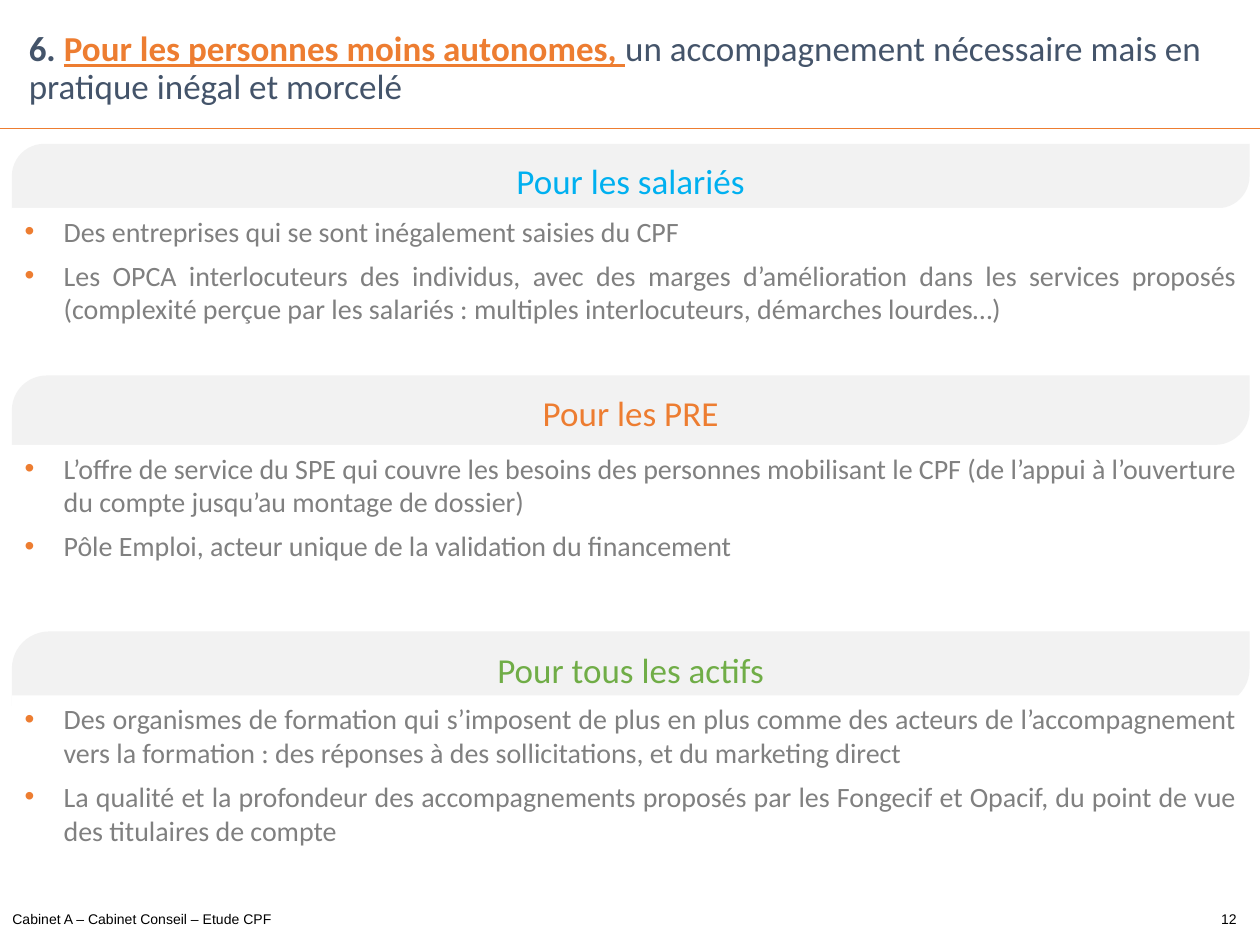
from lxml.etree import SubElement
from pptx import Presentation
from pptx.dml.color import RGBColor
from pptx.enum.shapes import MSO_CONNECTOR, MSO_SHAPE
from pptx.enum.text import MSO_ANCHOR, MSO_AUTO_SIZE, PP_ALIGN
from pptx.oxml.ns import qn
from pptx.util import Cm, Pt

ORANGE = RGBColor(0xED, 0x7D, 0x31)
SLATE = RGBColor(0x44, 0x54, 0x6A)
BLUE = RGBColor(0x00, 0xB0, 0xF0)
GREEN = RGBColor(0x70, 0xAD, 0x47)
GREY = RGBColor(0x80, 0x80, 0x80)
PALE = RGBColor(0xF2, 0xF2, 0xF2)
WHITE = RGBColor(0xFF, 0xFF, 0xFF)
BLACK = RGBColor(0x00, 0x00, 0x00)

LEFT, WIDTH = 0.24, 24.95

SECTIONS = [
    ("Pour les salariés", BLUE, 2.9, 1.3, 4.19, 2.21, [
        "Des entreprises qui se sont inégalement saisies du CPF",
        "Les OPCA interlocuteurs des individus, avec des marges d’amélioration dans les services "
        "proposés (complexité perçue par les salariés : multiples interlocuteurs, démarches lourdes…)",
    ]),
    ("Pour les PRE", ORANGE, 7.57, 1.4, 8.97, 2.9, [
        "L’offre de service du SPE qui couvre les besoins des personnes mobilisant le CPF "
        "(de l’appui à l’ouverture du compte jusqu’au montage de dossier)",
        "Pôle Emploi, acteur unique de la validation du financement",
    ]),
    ("Pour tous les actifs", GREEN, 12.73, 1.5, 14.02, 3.89, [
        "Des organismes de formation qui s’imposent de plus en plus comme des acteurs de "
        "l’accompagnement vers la formation : des réponses à des sollicitations, et du marketing direct",
        "La qualité et la profondeur des accompagnements proposés par les Fongecif et Opacif, "
        "du point de vue des titulaires de compte",
    ]),
]


def write(para, text, size=16, color=GREY, font="Calibri", bold=False, underline=False):
    span = para.add_run()
    span.text = text
    span.font.name = font
    span.font.size = Pt(size)
    span.font.color.rgb = color
    span.font.bold = bold
    span.font.underline = underline


def add_bullet(para):
    properties = para._p.get_or_add_pPr()
    properties.set("marL", str(Cm(0.79)))
    properties.set("indent", str(-Cm(0.79)))
    color = SubElement(properties, qn("a:buClr"))
    SubElement(color, qn("a:srgbClr"), val=str(ORANGE))
    SubElement(properties, qn("a:buFont"), typeface="Arial")
    SubElement(properties, qn("a:buChar"), char="•")


class SlideBuilder:
    def __init__(self, slide):
        self.slide = slide
        self.shapes = slide.shapes

    def place(self, box, left, top, width, height):
        box.left, box.top, box.width, box.height = Cm(left), Cm(top), Cm(width), Cm(height)

    def prepare(self, box, anchor=MSO_ANCHOR.TOP):
        frame = box.text_frame
        frame.word_wrap = True
        frame.auto_size = MSO_AUTO_SIZE.NONE
        frame.vertical_anchor = anchor
        return frame

    def title(self, parts):
        box = self.shapes.title
        self.place(box, 0, 0.15, 25.4, 2.49)
        frame = self.prepare(box, MSO_ANCHOR.MIDDLE)
        frame.margin_left = frame.margin_right = Cm(0.58)
        frame.margin_top = frame.margin_bottom = Cm(0.1)
        para = frame.paragraphs[0]
        para.alignment = PP_ALIGN.LEFT
        para.line_spacing = 0.9
        for text, style in parts:
            write(para, text, size=20, **style)

    def rule(self, top):
        line = self.shapes.add_connector(MSO_CONNECTOR.STRAIGHT, 0, Cm(top), Cm(25.4), Cm(top))
        line.line.color.rgb = ORANGE
        line.line.width = Pt(1)
        SubElement(line._element.spPr, qn("a:effectLst"))

    def band(self, text, color, top, height):
        box = self.shapes.add_shape(
            MSO_SHAPE.ROUND_2_DIAG_RECTANGLE, Cm(LEFT), Cm(top), Cm(WIDTH), Cm(height))
        box.adjustments[0], box.adjustments[1] = 0.5, 0
        box.shadow.inherit = False
        box.fill.solid()
        box.fill.fore_color.rgb = PALE
        box.line.fill.background()
        para = self.prepare(box).paragraphs[0]
        para.alignment = PP_ALIGN.CENTER
        write(para, text, size=20, color=color)

    def bullets(self, box, items, top, height):
        self.shapes._spTree.append(box._element)
        self.place(box, LEFT, top, WIDTH, height)
        box.fill.solid()
        box.fill.fore_color.rgb = WHITE
        frame = self.prepare(box)
        for index, item in enumerate(items):
            para = frame.add_paragraph() if index else frame.paragraphs[0]
            para.alignment = PP_ALIGN.JUSTIFY
            para.space_before = Pt(6)
            add_bullet(para)
            write(para, item)

    def footer(self, text, left, width, alignment):
        box = self.shapes.add_textbox(Cm(left), Cm(18.05), Cm(width), Cm(1))
        para = self.prepare(box, MSO_ANCHOR.MIDDLE).paragraphs[0]
        para.alignment = alignment
        para.line_spacing = 0.85
        write(para, text, size=8, color=BLACK, font="Arial")


def main():
    deck = Presentation()
    deck.slide_width, deck.slide_height = Cm(25.4), Cm(19.05)
    page = SlideBuilder(deck.slides.add_slide(deck.slide_layouts.get_by_name("Comparison")))
    *bodies, spare = list(page.slide.placeholders)[1:]
    spare._element.getparent().remove(spare._element)

    page.rule(2.59)
    page.footer("Cabinet A – Cabinet Conseil – Etude CPF", 0, 24.15, PP_ALIGN.LEFT)
    page.footer("12", 24.15, 1.25, PP_ALIGN.CENTER)
    page.title([
        ("6. ", {"color": SLATE, "bold": True}),
        ("Pour les personnes moins autonomes, ", {"color": ORANGE, "bold": True, "underline": True}),
        ("un accompagnement nécessaire mais en pratique inégal et morcelé", {"color": SLATE}),
    ])
    for body, section in zip(bodies, SECTIONS):
        heading, color, band_top, band_height, list_top, list_height, items = section
        page.band(heading, color, band_top, band_height)
        page.bullets(body, items, list_top, list_height)
    deck.save("out.pptx")


if __name__ == "__main__":
    main()
